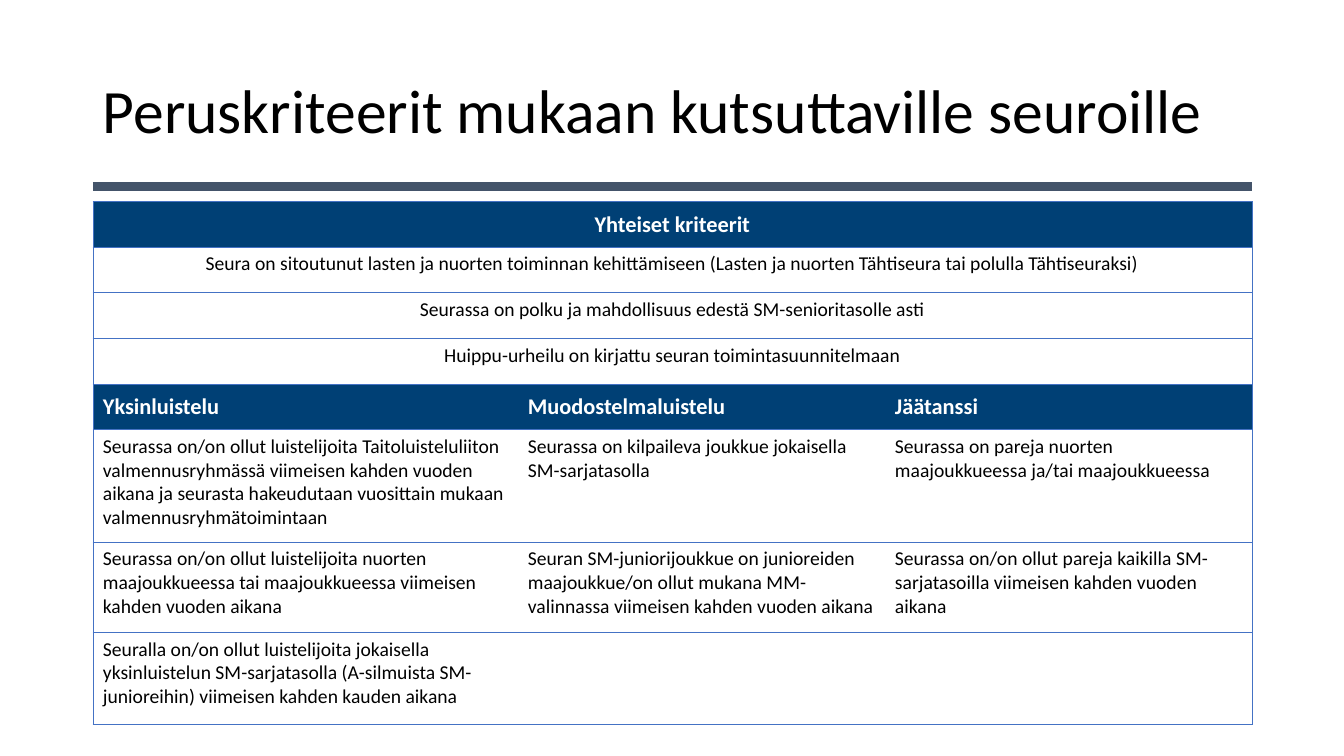
from dataclasses import dataclass

import pptx
import pptx.dml.color
import pptx.enum.shapes
import pptx.enum.text
import pptx.oxml
import pptx.oxml.ns
import pptx.util
from pptx.util import Cm

ALIGN = pptx.enum.text.PP_ALIGN
ANCHOR = pptx.enum.text.MSO_ANCHOR


@dataclass(frozen=True)
class Theme:
    font: str = "Calibri"
    text: str = "000000"
    header_text: str = "FFFFFF"
    header_fill: str = "004075"
    border: str = "4472C4"
    rule: str = "44546A"
    title_size: int = 44
    header_size: int = 16
    body_size: int = 14
    rule_width: int = 6
    border_width: float = 0.5


theme = Theme()


def write(frame, text, size=theme.body_size, color=theme.text, bold=False,
          align=ALIGN.LEFT, spacing=1.0):
    para = frame.paragraphs[0]
    para.alignment = align
    para.line_spacing = spacing
    span = para.add_run()
    span.text = text
    span.font.name = theme.font
    span.font.size = pptx.util.Pt(size)
    span.font.bold = bold
    span.font.color.rgb = pptx.dml.color.RGBColor.from_string(color)


def set_border(cell, side, visible):
    paint = "<a:noFill/>"
    if visible:
        paint = f'<a:solidFill><a:srgbClr val="{theme.border}"/></a:solidFill>'
    width = pptx.util.Pt(theme.border_width)
    cell._tc.get_or_add_tcPr().append(pptx.oxml.parse_xml(
        f'<a:ln{side} {pptx.oxml.ns.nsdecls("a")} w="{width}">{paint}</a:ln{side}>'))


deck = pptx.Presentation()
deck.slide_width = Cm(33.87)
deck.slide_height = Cm(19.05)
page = deck.slides.add_slide(deck.slide_layouts[5])

left, width = Cm(2.34), Cm(29.21)

# Title
title = page.shapes.title
title.left, title.top, title.width, title.height = left, Cm(1.02), width, Cm(3.68)
title.text_frame.vertical_anchor = ANCHOR.MIDDLE
title.text_frame.word_wrap = True
write(title.text_frame, "Peruskriteerit mukaan kutsuttaville seuroille",
      size=theme.title_size, spacing=0.9)

# Rule under the title
rule_top = Cm(4.7)
rule = page.shapes.add_connector(pptx.enum.shapes.MSO_CONNECTOR.STRAIGHT,
                                 left, rule_top, left + width, rule_top)
rule.line.width = pptx.util.Pt(theme.rule_width)
rule.line.color.rgb = pptx.dml.color.RGBColor.from_string(theme.rule)
rule._element.spPr.append(pptx.oxml.parse_xml(
    f'<a:effectLst {pptx.oxml.ns.nsdecls("a")}/>'))

# Criteria: a row with one text spans all columns
criteria = [
    ["Yhteiset kriteerit"],
    ["Seura on sitoutunut lasten ja nuorten toiminnan kehittämiseen "
     "(Lasten ja nuorten Tähtiseura tai polulla Tähtiseuraksi)"],
    ["Seurassa on polku ja mahdollisuus edestä SM-senioritasolle asti"],
    ["Huippu-urheilu on kirjattu seuran toimintasuunnitelmaan"],
    ["Yksinluistelu", "Muodostelmaluistelu", "Jäätanssi"],
    ["Seurassa on/on ollut luistelijoita Taitoluisteluliiton valmennusryhmässä "
     "viimeisen kahden vuoden aikana ja seurasta hakeudutaan vuosittain mukaan "
     "valmennusryhmätoimintaan",
     "Seurassa on kilpaileva joukkue jokaisella SM-sarjatasolla",
     "Seurassa on pareja nuorten maajoukkueessa ja/tai maajoukkueessa"],
    ["Seurassa on/on ollut luistelijoita nuorten maajoukkueessa tai "
     "maajoukkueessa viimeisen kahden vuoden aikana",
     "Seuran SM-juniorijoukkue on junioreiden maajoukkue/on ollut mukana "
     "MM-valinnassa viimeisen kahden vuoden aikana",
     "Seurassa on/on ollut pareja kaikilla SM-sarjatasoilla viimeisen kahden "
     "vuoden aikana"],
    ["Seuralla on/on ollut luistelijoita jokaisella yksinluistelun "
     "SM-sarjatasolla (A-silmuista SM-junioreihin) viimeisen kahden kauden aikana",
     "", ""],
]
header_rows = (0, 4)
column_widths = [10.71, 9.25, 9.25]
row_heights = [1.15] * 5 + [2.84, 2.27, 2.32]
last_column = len(column_widths) - 1

# Table
table = page.shapes.add_table(len(row_heights), len(column_widths), left, Cm(5.08),
                              width, Cm(sum(row_heights))).table
table.first_row = False
table.horz_banding = False
for column, column_width in zip(table.columns, column_widths):
    column.width = Cm(column_width)

for r, texts in enumerate(criteria):
    table.rows[r].height = Cm(row_heights[r])
    spans_all = len(texts) == 1
    is_header = r in header_rows
    if spans_all:
        table.cell(r, 0).merge(table.cell(r, last_column))

    for c in range(len(column_widths)):
        cell = table.cell(r, c)
        set_border(cell, "L", c == 0)
        set_border(cell, "R", c == last_column or cell.is_merge_origin)
        set_border(cell, "T", True)
        set_border(cell, "B", True)
        if is_header:
            cell.fill.solid()
            cell.fill.fore_color.rgb = pptx.dml.color.RGBColor.from_string(
                theme.header_fill)
            cell.vertical_anchor = ANCHOR.MIDDLE
        else:
            cell.fill.background()

    for c, text in enumerate(texts):
        if text:
            write(table.cell(r, c).text_frame, text,
                  size=theme.header_size if is_header else theme.body_size,
                  color=theme.header_text if is_header else theme.text,
                  bold=is_header,
                  align=ALIGN.CENTER if spans_all else ALIGN.LEFT)

deck.save("out.pptx")
